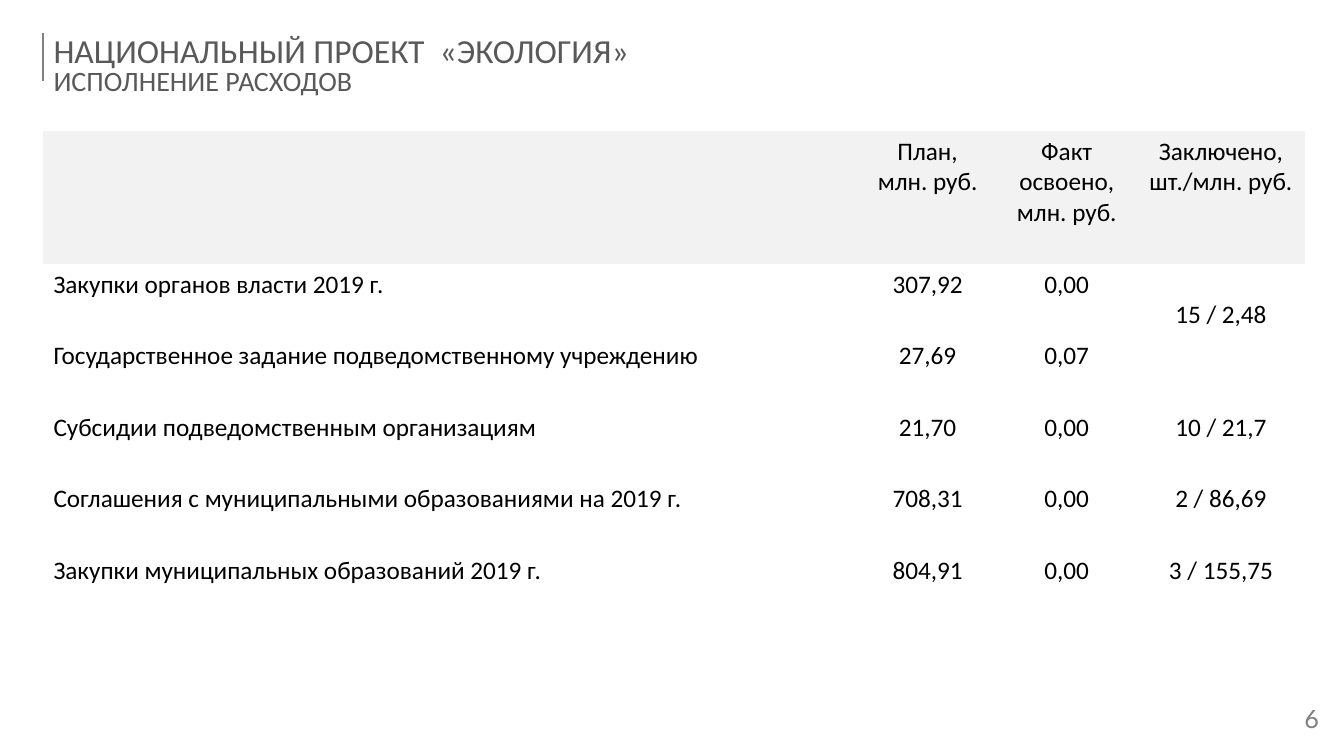
"""Build the slide on spending under the national ecology project."""
from dataclasses import dataclass

from lxml import etree
from pptx import Presentation
from pptx.dml.color import RGBColor
from pptx.enum.shapes import MSO_CONNECTOR
from pptx.enum.text import MSO_ANCHOR, MSO_AUTO_SIZE, PP_ALIGN
from pptx.oxml.ns import qn
from pptx.util import Inches, Pt

LEFT, CENTER = PP_ALIGN.LEFT, PP_ALIGN.CENTER
MIDDLE, FIXED = MSO_ANCHOR.MIDDLE, MSO_AUTO_SIZE.NONE
STRAIGHT = MSO_CONNECTOR.STRAIGHT
WIDE, HIGH = Inches(13.33), Inches(7.5)
PLAIN = "{2D5ABB26-0587-4C30-8999-92F81FD0307C}"
EDGE, TOP = 3.23, 4.4
COLS = (60.69, 10.2, 10.5, 12.45)
HEAD_ROW, BODY_ROW = 17.6, 9.47
LINE_DROP = 4.73


@dataclass
class Line:
    """One line of text with its look."""
    text: str
    size: int = 18
    font: str = "Calibri"
    tint: str = "000000"
    align: PP_ALIGN = CENTER
    space: float = 1.0


HEADS = ("", "План,\nмлн. руб.", "Факт\nосвоено,\nмлн. руб.",
         "Заключено,\nшт./млн. руб.")
ROWS = (
    ("Закупки органов власти 2019 г.", "307,92", "0,00", "15 / 2,48"),
    ("Государственное задание подведомственному учреждению",
     "27,69", "0,07", ""),
    ("Субсидии подведомственным организациям", "21,70", "0,00", "10 / 21,7"),
    ("Соглашения с муниципальными образованиями на 2019 г.",
     "708,31", "0,00", "2 / 86,69"),
    ("Закупки муниципальных образований 2019 г.",
     "804,91", "0,00", "3 / 155,75"),
)
TITLE = (
    Line("НАЦИОНАЛЬНЫЙ ПРОЕКТ  «ЭКОЛОГИЯ»", 24, tint="595959",
         align=LEFT, space=0.8),
    Line("ИСПОЛНЕНИЕ РАСХОДОВ", 20, tint="595959", align=LEFT, space=0.8),
)


def across(share: float) -> int:
    """Turn a percentage of the slide width into a length."""
    return round(WIDE * share / 100)


def down(share: float) -> int:
    """Turn a percentage of the slide height into a length."""
    return round(HIGH * share / 100)


def color(code: str) -> RGBColor:
    """Turn a hex string into a colour."""
    return RGBColor.from_string(code)


def write(frame, lines) -> None:
    """Fill a text frame with lines, one run each."""
    for i, line in enumerate(lines):
        para = frame.add_paragraph() if i else frame.paragraphs[0]
        para.alignment, para.line_spacing = line.align, line.space
        run = para.add_run()
        run.text = line.text
        run.font.size, run.font.name = Pt(line.size), line.font
        run.font.color.rgb = color(line.tint)


def set_frame(frame) -> None:
    """Wrap a frame at fixed size, with its text in the middle."""
    frame.word_wrap, frame.auto_size = True, FIXED
    frame.vertical_anchor = MIDDLE


def add_title(slide) -> None:
    """Place the two-line title beside its rule."""
    title = slide.shapes.title
    title.left, title.top = across(EDGE), down(TOP)
    title.width, title.height = across(93.5), down(8.93)
    set_frame(title.text_frame)
    write(title.text_frame, TITLE)
    rule = slide.shapes.add_connector(
        STRAIGHT, across(EDGE), down(TOP), across(EDGE), down(10.67))
    rule.line.color.rgb, rule.line.width = color("808080"), Pt(1.5)
    etree.SubElement(rule._element.spPr, qn("a:effectLst"))


def add_grid(slide) -> None:
    """Draw the spending table."""
    data = (HEADS, *ROWS)
    tall = HEAD_ROW + BODY_ROW * len(ROWS)
    table = slide.shapes.add_table(
        len(data), len(COLS), across(EDGE), down(17.33),
        across(sum(COLS)), down(tall)).table
    table._tbl.tblPr.find(qn("a:tableStyleId")).text = PLAIN
    table.first_row = table.horz_banding = False
    for col, share in zip(table.columns, COLS):
        col.width = across(share)
    for r, texts in enumerate(data):
        table.rows[r].height = down(BODY_ROW if r else HEAD_ROW)
        for c, text in enumerate(texts):
            cell = table.cell(r, c)
            if r:
                cell.fill.background()
            else:
                cell.fill.solid()
                cell.fill.fore_color.rgb = color("F2F2F2")
            if text:
                align = CENTER if c else LEFT
                write(cell.text_frame,
                      [Line(part, align=align) for part in text.split("\n")])
    joint = table.cell(1, 3)
    joint.merge(table.cell(2, 3))
    joint.margin_top = down(LINE_DROP)


def add_number(slide) -> None:
    """Put the page number in the lower right corner."""
    box = slide.shapes.add_textbox(
        across(93.25), down(92), across(8.7), down(6.67))
    set_frame(box.text_frame)
    write(box.text_frame, [Line("6", font="Lato", tint="808080", space=0.8)])


def main() -> None:
    """Build and save the deck."""
    deck = Presentation()
    deck.slide_width, deck.slide_height = WIDE, HIGH
    slide = deck.slides.add_slide(deck.slide_layouts[5])
    add_title(slide)
    add_grid(slide)
    add_number(slide)
    deck.save("out.pptx")


if __name__ == "__main__":
    main()
